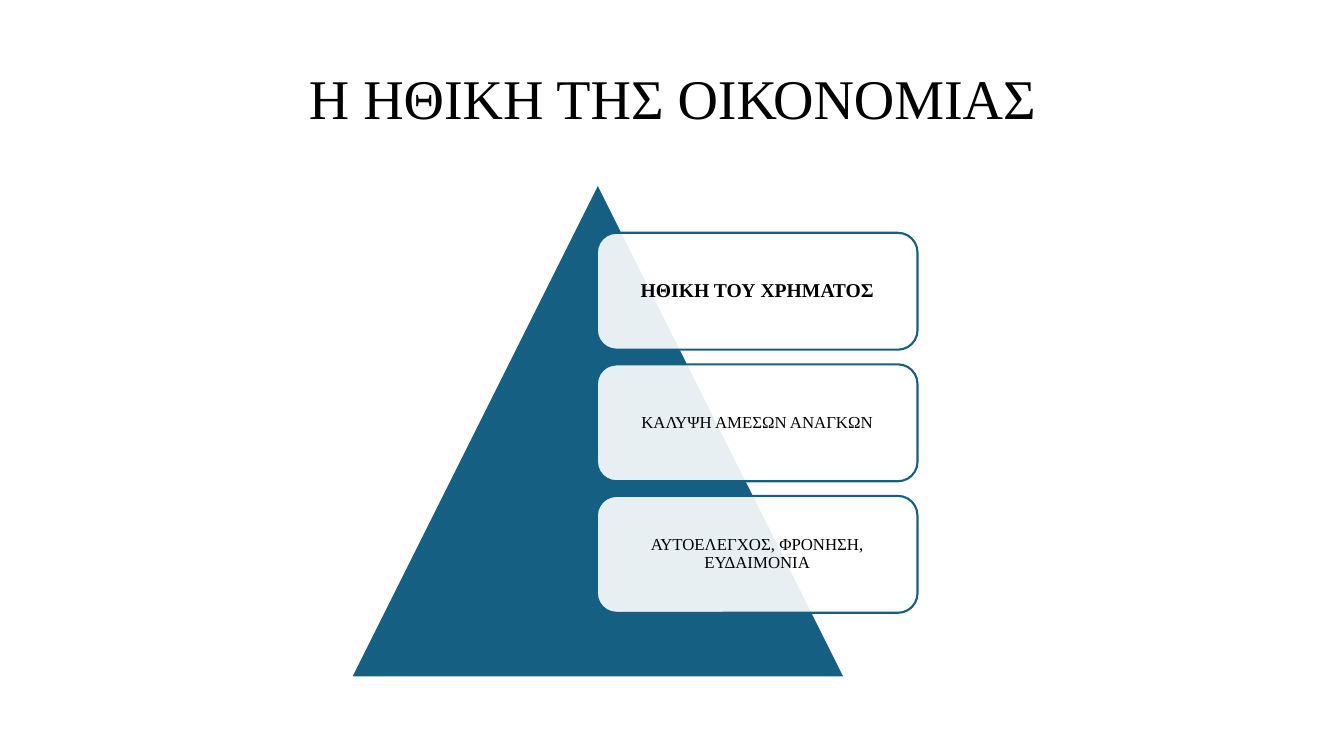
from lxml.etree import SubElement
from pptx import Presentation
from pptx.dml.color import RGBColor
from pptx.enum.shapes import MSO_SHAPE
from pptx.enum.text import MSO_ANCHOR, MSO_AUTO_SIZE, PP_ALIGN
from pptx.oxml.ns import qn
from pptx.util import Inches, Pt

COLORS = {"teal": "156082", "white": "FFFFFF", "black": "000000"}
FONT = "Times New Roman"
PRINCIPLES = [
    ("ΗΘΙΚΗ ΤΟΥ ΧΡΗΜΑΤΟΣ", 14, True),
    ("ΚΑΛΥΨΗ ΑΜΕΣΩΝ ΑΝΑΓΚΩΝ", 12, False),
    ("ΑΥΤΟΕΛΕΓΧΟΣ, ΦΡΟΝΗΣΗ, ΕΥΔΑΙΜΟΝΙΑ", 12, False),
]
FIRST_TOP, STEP = 2.31, 1.305


def color(name):
    return RGBColor.from_string(COLORS[name])


def write(frame, text, size, bold, anchor):
    frame.text = text
    frame.word_wrap = True
    frame.auto_size = MSO_AUTO_SIZE.NONE
    frame.vertical_anchor = anchor
    paragraph = frame.paragraphs[0]
    paragraph.alignment = PP_ALIGN.CENTER
    paragraph.line_spacing = 0.9
    font = paragraph.runs[0].font
    font.name, font.size, font.bold = FONT, Pt(size), bold
    font.color.rgb = color("black")


def add_title(slide, text):
    title = slide.shapes.title
    title.left, title.top = Inches(1.67), Inches(0.38)
    title.width, title.height = Inches(10), Inches(0.98)
    write(title.text_frame, text, 40, False, MSO_ANCHOR.BOTTOM)


def add_outlined(slide, kind, left, top, width, height, fill, line):
    outlined = slide.shapes.add_shape(
        kind, Inches(left), Inches(top), Inches(width), Inches(height))
    outlined.shadow.inherit = False
    outlined.fill.solid()
    outlined.fill.fore_color.rgb = color(fill)
    outlined.line.color.rgb = color(line)
    outlined.line.width = Pt(1.5)
    return outlined


def add_principle(slide, top, text, size, bold):
    card = add_outlined(slide, MSO_SHAPE.ROUNDED_RECTANGLE,
                        5.92, top, 3.18, 1.16, "white", "teal")
    fill_color = card._element.spPr.find(qn("a:solidFill"))[0]
    SubElement(fill_color, qn("a:alpha"), val="90000")
    frame = card.text_frame
    frame.margin_left = frame.margin_right = Inches(0.05)
    frame.margin_top = frame.margin_bottom = Inches(0.05)
    write(frame, text, size, bold, MSO_ANCHOR.MIDDLE)


def main():
    presentation = Presentation()
    presentation.slide_width = Inches(13.33)
    presentation.slide_height = Inches(7.5)
    slide = presentation.slides.add_slide(presentation.slide_layouts[5])
    add_title(slide, "Η ΗΘΙΚΗ ΤΗΣ ΟΙΚΟΝΟΜΙΑΣ")
    add_outlined(slide, MSO_SHAPE.ISOSCELES_TRIANGLE,
                 3.48, 1.82, 4.9, 4.9, "teal", "white")
    for row, (text, size, bold) in enumerate(PRINCIPLES):
        add_principle(slide, FIRST_TOP + row * STEP, text, size, bold)
    presentation.save("out.pptx")


if __name__ == "__main__":
    main()
